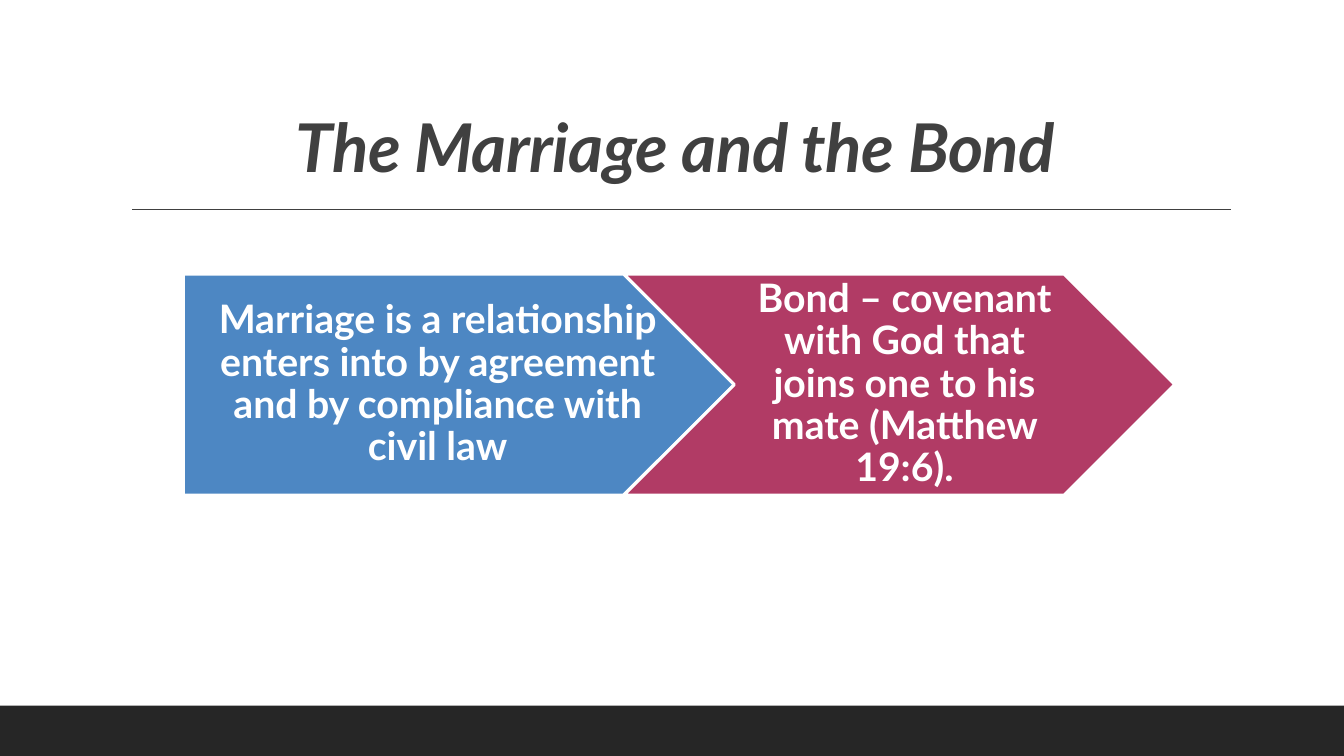
from lxml import etree
from pptx import Presentation
from pptx import util as u
from pptx.dml.color import RGBColor
from pptx.enum import shapes, text
from pptx.oxml.ns import qn

COLORS = {
    "white": "FFFFFF",
    "footer": "262626",
    "ink": "404040",
    "marriage": "4D87C3",
    "bond": "B13B65",
}


class SlideBuilder:
    font = "Lato"

    def __init__(self, presentation):
        self.slide = presentation.slides.add_slide(presentation.slide_layouts[6])

    @staticmethod
    def color(name):
        return RGBColor.from_string(COLORS[name])

    def block(self, kind, box, fill, outline=None):
        shape = self.slide.shapes.add_shape(kind, *map(u.Inches, box))
        shape.shadow.inherit = False
        shape.fill.solid()
        shape.fill.fore_color.rgb = self.color(fill)
        if outline:
            shape.line.color.rgb = self.color(outline)
            shape.line.width = u.Pt(2)
        else:
            shape.line.fill.background()

    def rule(self, left, right, top):
        """Draw a thin horizontal line."""
        line = self.slide.shapes.add_connector(
            shapes.MSO_CONNECTOR.STRAIGHT, *map(u.Inches, (left, top, right, top)))
        line.line.color.rgb = self.color("ink")
        line.line.width = u.Pt(1)
        etree.SubElement(line._element.spPr, qn("a:effectLst"))

    def label(self, words, box, size, color, anchor, insets, italic=False, spacing=0):
        """Add centred bold text; insets run left, top, right, bottom."""
        frame = self.slide.shapes.add_textbox(*map(u.Inches, box)).text_frame
        frame.word_wrap = True
        frame.vertical_anchor = anchor
        (frame.margin_left, frame.margin_top,
         frame.margin_right, frame.margin_bottom) = map(u.Inches, insets)
        paragraph = frame.paragraphs[0]
        paragraph.alignment = text.PP_ALIGN.CENTER
        paragraph.line_spacing = 0.9
        run = paragraph.add_run()
        run.text = words
        if spacing:
            run.font._element.set("spc", str(round(spacing * 100)))
        font = paragraph.font
        font.name, font.size = self.font, u.Pt(size)
        font.bold, font.italic = True, italic
        font.color.rgb = self.color(color)


def main():
    presentation = Presentation()
    presentation.slide_width = u.Inches(13.33)
    presentation.slide_height = u.Inches(7.5)
    builder = SlideBuilder(presentation)

    builder.block(shapes.MSO_SHAPE.RECTANGLE, (0, 7, 13.33, 0.5), "footer")
    builder.rule(1.31, 12.21, 2.08)
    builder.label("The Marriage and the Bond", (1.2, 0.31, 11, 1.59), 48, "ink",
                  text.MSO_ANCHOR.BOTTOM, (0.1, 0.05, 0.1, 0.05),
                  italic=True, spacing=-0.4)

    top, width, height = 2.72, 5.46, 2.19
    steps = [
        (shapes.MSO_SHAPE.PENTAGON, "marriage", 1.82, 1.82, 4.92, 0.16,
         "Marriage is a relationship enters into by agreement "
         "and by compliance with civil law"),
        (shapes.MSO_SHAPE.CHEVRON, "bond", 6.19, 7.29, 3.28, 0.12,
         "Bond – covenant with God that joins one to his mate (Matthew 19:6)."),
    ]
    for kind, fill, left, text_left, text_width, inset, words in steps:
        builder.block(kind, (left, top, width, height), fill, "white")
        builder.label(words, (text_left, top, text_width, height), 28, "white",
                      text.MSO_ANCHOR.MIDDLE, (inset, 0.08, 0.04, 0.08))

    presentation.save("out.pptx")


if __name__ == "__main__":
    main()
